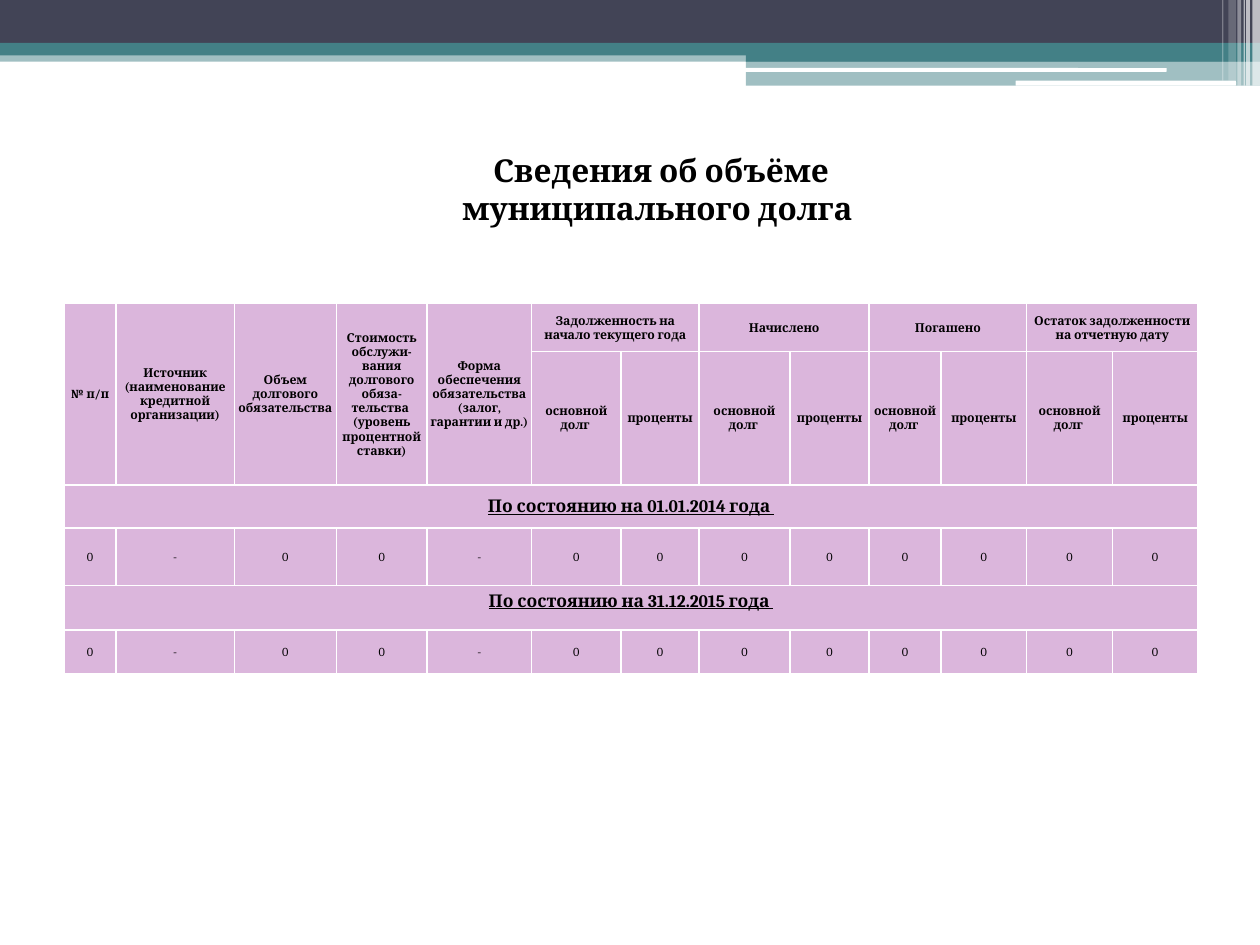
from dataclasses import dataclass

from lxml.etree import SubElement
from pptx import Presentation
from pptx.dml.color import RGBColor
from pptx.enum.shapes import MSO_SHAPE
from pptx.enum.text import MSO_ANCHOR, PP_ALIGN
from pptx.oxml import parse_xml
from pptx.oxml.ns import nsdecls, qn
from pptx.util import Inches, Pt


@dataclass(frozen=True)
class Theme:
    font: str = "Cambria"
    ink: str = "000000"
    white: str = "FFFFFF"
    navy: str = "424456"
    teal: str = "438086"
    lilac: str = "DBB6DC"
    title: int = 18
    date: int = 10
    small: int = 7


class Page:
    def __init__(self, deck, theme):
        self.theme = theme
        self.slide = deck.slides.add_slide(deck.slide_layouts[6])

    def bar(self, box, color, alpha=100, kind=MSO_SHAPE.RECTANGLE):
        shape = self.slide.shapes.add_shape(kind, *map(Inches, box))
        shape.shadow.inherit = False
        shape.line.fill.background()
        shape.fill.solid()
        shape.fill.fore_color.rgb = RGBColor.from_string(color)
        if alpha < 100:
            tint = shape.element.spPr.find(qn("a:solidFill"))[0]
            SubElement(tint, qn("a:alpha"), val=str(alpha * 1000))
        return shape

    def label(self, frame, text, size, bold=False, under=False):
        para = frame.paragraphs[0]
        para.text = text
        para.alignment = PP_ALIGN.CENTER
        for run in para.runs:
            font = run.font
            font.name = self.theme.font
            font.size = Pt(size)
            font.bold = bold
            font.underline = under
            font.color.rgb = RGBColor.from_string(self.theme.ink)

    def title(self, box, text):
        frame = self.slide.shapes.add_textbox(*map(Inches, box)).text_frame
        frame.word_wrap = True
        self.label(frame, text, self.theme.title, bold=True)

    def grid(self, left, top, cols, rows):
        frame = self.slide.shapes.add_table(
            len(rows), len(cols), Inches(left), Inches(top),
            Inches(sum(cols)), Inches(sum(rows)))
        table = frame.table
        table.first_row = table.horz_banding = False
        for col, width in zip(table.columns, cols):
            col.width = Inches(width)
        for row, height in zip(table.rows, rows):
            row.height = Inches(height)
        for cell in table.iter_cells():
            self.style(cell)
        return table

    def style(self, cell):
        cell.vertical_anchor = MSO_ANCHOR.MIDDLE
        cell.margin_left = cell.margin_right = cell.margin_top = Inches(0.01)
        cell.margin_bottom = 0
        props = cell._tc.get_or_add_tcPr()
        for side in ("lnL", "lnR", "lnT", "lnB"):
            props.append(parse_xml(
                f'<a:{side} {nsdecls("a")} w="{Pt(1)}"><a:solidFill>'
                f'<a:srgbClr val="{self.theme.white}"/>'
                f'</a:solidFill></a:{side}>'))
        cell.fill.solid()
        cell.fill.fore_color.rgb = RGBColor.from_string(self.theme.lilac)


def band(page):
    """Draw the bars along the top edge."""
    theme = page.theme
    for box, color, alpha in (
            ((0, 0.4, 10, 0.09), theme.teal, 50),
            ((0, 0, 10, 0.34), theme.navy, 100),
            ((0, 0.34, 10, 0.1), theme.teal, 100),
            ((5.92, 0.39, 4.08, 0.1), theme.teal, 100),
            ((5.92, 0.48, 4.08, 0.2), theme.teal, 50)):
        page.bar(box, color, alpha)
    for box in ((5.91, 0.54, 3.35, 0.03), (8.06, 0.64, 1.75, 0.04)):
        pill = page.bar(box, theme.white, kind=MSO_SHAPE.ROUNDED_RECTANGLE)
        pill.adjustments[0] = 0.17
    for left, width, height, alpha in (
            (9.94, 0.06, 0.68, 65), (9.89, 0.03, 0.68, 65),
            (9.87, 0.01, 0.68, 60), (9.82, 0.03, 0.68, 40),
            (9.75, 0.06, 0.64, 20), (9.7, 0.01, 0.64, 30)):
        page.bar((left, 0, width, height), theme.white, alpha)


def debts(page):
    """Fill the table of debts."""
    small = page.theme.small
    cols = (0.41, 0.94, 0.81, 0.72, 0.83, 0.71, 0.62,
            0.72, 0.63, 0.57, 0.68, 0.68, 0.68)
    table = page.grid(0.51, 2.41, cols, (0.38, 1.05, 0.34, 0.46, 0.35, 0.35))
    last = len(cols) - 1
    heads = (
        "№ п/п",
        "Источник (наименование кредитной организации)",
        "Объем долгового обязательства",
        "Стоимость обслужи-вания долгового обяза- тельства \n"
        "(уровень процентной ставки)",
        "Форма обеспечения обязательства (залог, гарантии и др.)")
    groups = ("Задолженность на начало текущего года", "Начислено",
              "Погашено", "Остаток задолженности на отчетную дату")

    for col, text in enumerate(heads):
        cell = table.cell(0, col)
        cell.merge(table.cell(1, col))
        page.label(cell.text_frame, text, small, bold=True)
    for index, text in enumerate(groups):
        col = len(heads) + 2 * index
        cell = table.cell(0, col)
        cell.merge(table.cell(0, col + 1))
        page.label(cell.text_frame, text, small, bold=True)
        for step, part in enumerate(("основной долг ", "проценты")):
            page.label(table.cell(1, col + step).text_frame, part, small,
                       bold=True)

    for row, date, gap in ((2, "01.01.2014", 0), (4, "31.12.2015", 0.11)):
        cell = table.cell(row, 0)
        cell.merge(table.cell(row, last))
        cell.margin_bottom = Inches(gap)
        page.label(cell.text_frame, f"По состоянию на {date} года ",
                   page.theme.date, bold=True, under=True)
        for col in range(len(cols)):
            text = "-" if col in (1, 4) else "0"
            page.label(table.cell(row + 1, col).text_frame, text, small)


def main():
    deck = Presentation()
    deck.slide_width, deck.slide_height = Inches(10), Inches(7.5)
    page = Page(deck, Theme())
    band(page)
    page.title((2.72, 1.15, 5, 0.71),
               " Сведения об объёме муниципального долга")
    debts(page)
    deck.save("out.pptx")


if __name__ == "__main__":
    main()
